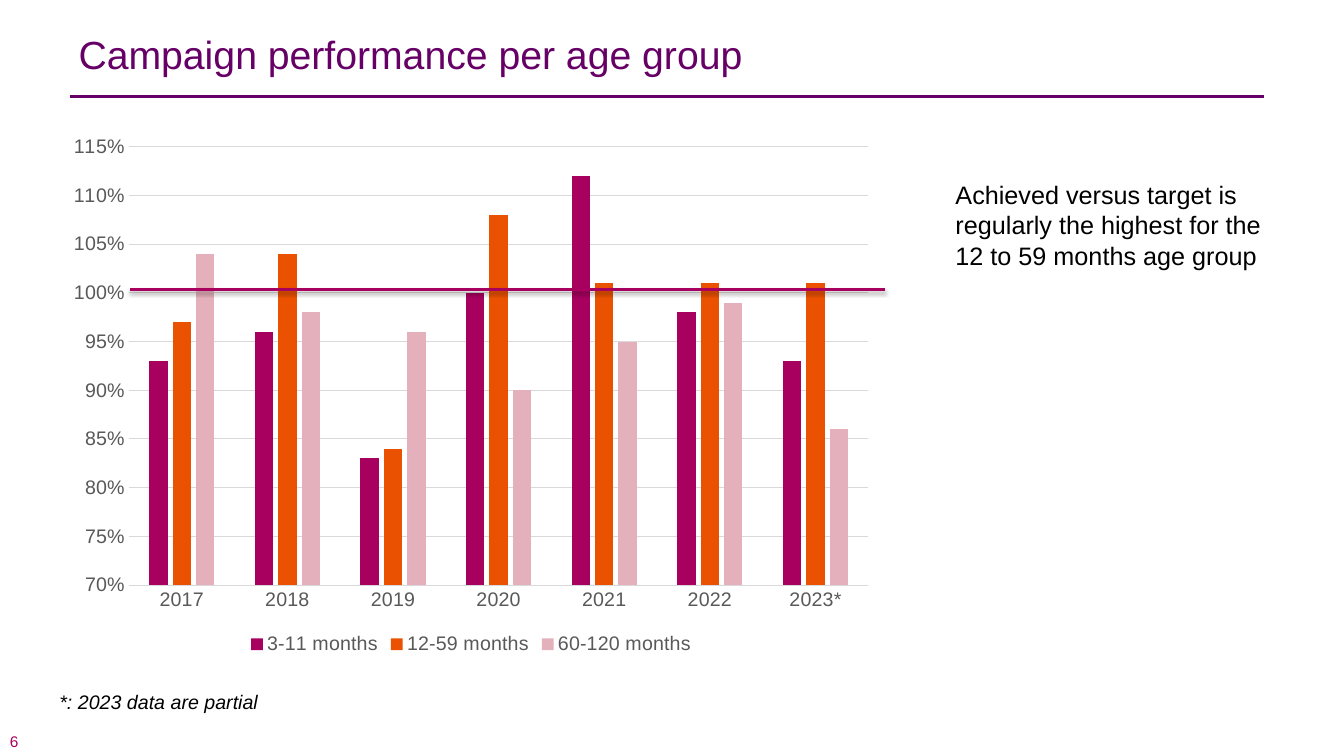
"""Build the slide on campaign performance per age group."""
from lxml.etree import SubElement
from pptx import Presentation
from pptx.chart.data import CategoryChartData
from pptx.dml.color import RGBColor
from pptx.enum.chart import XL_CHART_TYPE, XL_LEGEND_POSITION, XL_TICK_MARK
from pptx.enum.shapes import MSO_CONNECTOR
from pptx.enum.text import MSO_ANCHOR
from pptx.oxml.ns import qn
from pptx.util import Pt

COLORS = {
    "title": "660066", "text": "000000", "axis": "595959", "grid": "D9D9D9",
    "infants": "A7005F", "toddlers": "EA5100", "children": "E4B0BB",
}
FONT = "Arial"


def style_font(font, size, color):
    font.name, font.size = FONT, Pt(size)
    font.color.rgb = RGBColor.from_string(COLORS[color])


def add_rule(x1, x2, y, color):
    s = slide.shapes.add_connector(MSO_CONNECTOR.STRAIGHT, Pt(x1), Pt(y), Pt(x2), Pt(y))
    s.line.color.rgb = RGBColor.from_string(COLORS[color])
    s.line.width = Pt(2)
    return SubElement(s._element.spPr, qn("a:effectLst"))


prs = Presentation()
prs.slide_width, prs.slide_height = Pt(960), Pt(540)
slide = prs.slides.add_slide(prs.slide_layouts[6])

texts = [
    ("Campaign performance per age group", 49, 26, 855, 54, 28, "title"),
    ("Achieved versus target is regularly the highest for the 12 to 59 months age group",
     675.4, 124.6, 238.3, 72.7, 18, "text"),
    ("*: 2023 data are partial", 35.3, 489.6, 178.6, 24.5, 14, "text"),
    ("6", 0, 522.7, 76.3, 13, 11, "infants"),
]
boxes = []
for text, x, y, w, h, size, color in texts:
    s = slide.shapes.add_textbox(Pt(x), Pt(y), Pt(w), Pt(h))
    tf = s.text_frame
    tf.word_wrap = True
    p = tf.paragraphs[0]
    r = p.add_run()
    r.text = text
    style_font(r.font, size, color)
    boxes.append(tf)
title, comment, footnote, number = boxes
title.paragraphs[0].line_spacing = Pt(26)
footnote.paragraphs[0].runs[0].font.italic = True
number.vertical_anchor = MSO_ANCHOR.MIDDLE
number.margin_top = number.margin_bottom = 0

add_rule(49.7, 902.9, 69.1, "title")

age_groups = [
    ("3-11 months", "infants", (0.93, 0.96, 0.83, 1, 1.12, 0.98, 0.93)),
    ("12-59 months", "toddlers", (0.97, 1.04, 0.84, 1.08, 1.01, 1.01, 1.01)),
    ("60-120 months", "children", (1.04, 0.98, 0.96, 0.9, 0.95, 0.99, 0.86)),
]
data = CategoryChartData(number_format="0%")
data.categories = ["2017", "2018", "2019", "2020", "2021", "2022", "2023*"]
for name, color, values in age_groups:
    data.add_series(name, values)
chart = slide.shapes.add_chart(
    XL_CHART_TYPE.COLUMN_CLUSTERED, Pt(41), Pt(89.3), Pt(591.1), Pt(381.6), data).chart
style_font(chart.font, 10, "text")
chart.has_title = False
chart.has_legend = True
chart.legend.position = XL_LEGEND_POSITION.BOTTOM
chart.legend.include_in_layout = False
style_font(chart.legend.font, 14, "axis")

plot = chart.plots[0]
plot.gap_width, plot.overlap, plot.vary_by_categories = 219, -27, False
for series, (name, color, values) in zip(plot.series, age_groups):
    series.format.fill.solid()
    series.format.fill.fore_color.rgb = RGBColor.from_string(COLORS[color])

years, shares = chart.category_axis, chart.value_axis
for axis in (years, shares):
    axis.major_tick_mark = axis.minor_tick_mark = XL_TICK_MARK.NONE
    style_font(axis.tick_labels.font, 14, "axis")
shares.minimum_scale, shares.maximum_scale, shares.major_unit = 0.7, 1.15, 0.05
shares.tick_labels.number_format = "0%"
shares.tick_labels.number_format_is_linked = False
shares.format.line.fill.background()
for line in (years.format.line, shares.major_gridlines.format.line):
    line.color.rgb = RGBColor.from_string(COLORS["grid"])
    line.width = Pt(0.75)

effects = add_rule(92.9, 632.2, 206.6, "infants")
shadow = SubElement(effects, qn("a:outerShdw"), blurRad=str(Pt(3.1)), dist=str(Pt(1.6)),
                    dir="5400000", rotWithShape="0")
shade = SubElement(shadow, qn("a:srgbClr"), val=COLORS["text"])
SubElement(shade, qn("a:alpha"), val="38000")

prs.save("out.pptx")
